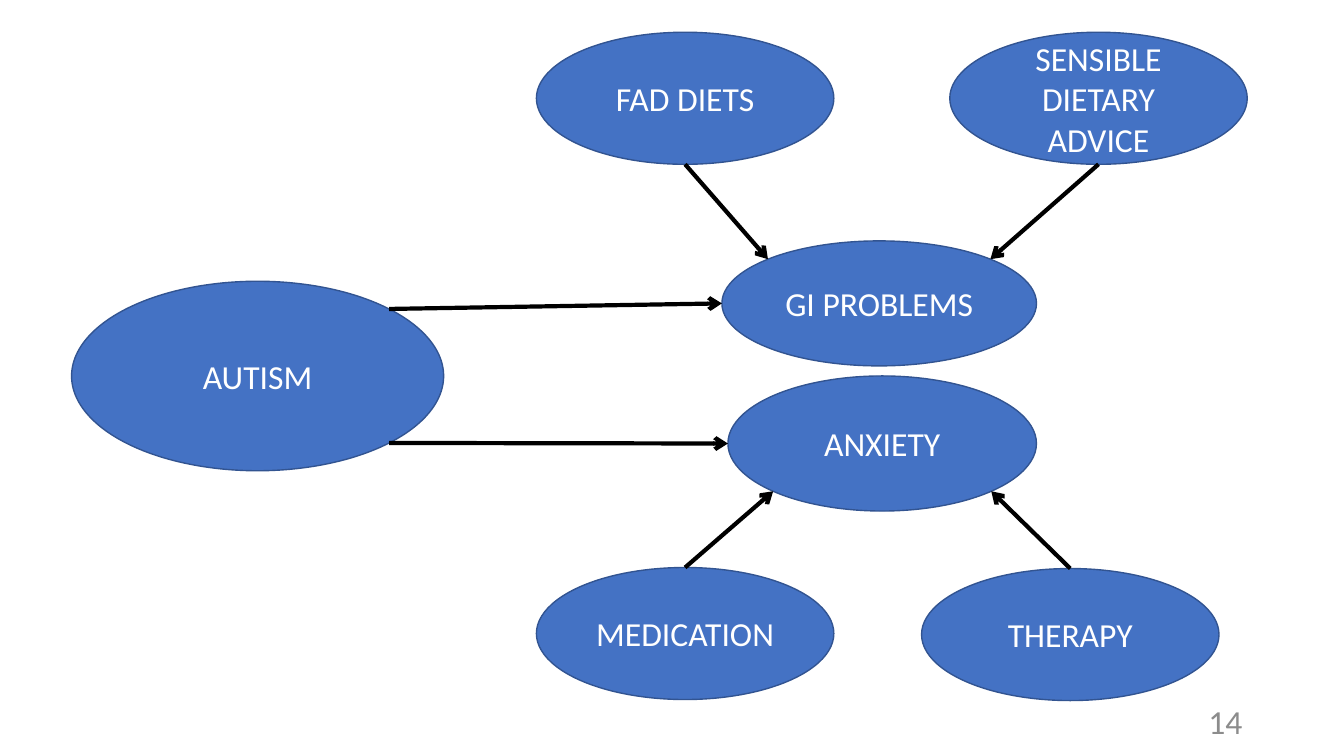
"""Build the slide that maps autism to GI problems, anxiety and their treatments."""
import math

import pptx
import pptx.dml.color
import pptx.enum.shapes
import pptx.enum.text
import pptx.oxml
import pptx.oxml.ns
import pptx.util

Inches = pptx.util.Inches
COLORS = {"fill": "4472C4", "outline": "325491", "text": "FFFFFF", "arrow": "000000", "number": "8C8C8C"}
FONT = {"name": "Calibri", "size": pptx.util.Pt(24)}
FRAME = {"word_wrap": True, "vertical_anchor": pptx.enum.text.MSO_ANCHOR.MIDDLE}
OVALS = {
    "AUTISM": (0.71, 2.79, 3.69, 1.88),
    "ANXIETY": (7.22, 3.73, 3.06, 1.34),
    "GI PROBLEMS": (7.16, 2.39, 3.12, 1.24),
    "FAD DIETS": (5.32, 0.32, 2.95, 1.31),
    "SENSIBLE DIETARY\vADVICE": (9.42, 0.32, 2.95, 1.31),
    "MEDICATION": (5.32, 5.63, 2.95, 1.31),
    "THERAPY": (9.14, 5.64, 2.95, 1.31),
}
ARROWS = [
    ("AUTISM", -45, "GI PROBLEMS", 180),
    ("AUTISM", 45, "ANXIETY", 180),
    ("FAD DIETS", 90, "GI PROBLEMS", 225),
    ("SENSIBLE DIETARY\vADVICE", 90, "GI PROBLEMS", -45),
    ("MEDICATION", -90, "ANXIETY", 135),
    ("THERAPY", -90, "ANXIETY", 45),
]


def write_text(box, text, color, alignment):
    """Put formatted text in a box."""
    for name, value in FRAME.items():
        setattr(box.text_frame, name, value)
    para = box.text_frame.paragraphs[0]
    para.text = text
    para.alignment = alignment
    for span in para.runs:
        for name, value in FONT.items():
            setattr(span.font, name, value)
        span.font.color.rgb = pptx.dml.color.RGBColor.from_string(COLORS[color])


def rim_point(label, degrees):
    """Return the point on an oval's rim, measured clockwise from its right end."""
    left, top, width, height = OVALS[label]
    angle = math.radians(degrees)
    return (Inches(left + width / 2 * (1 + math.cos(angle))),
            Inches(top + height / 2 * (1 + math.sin(angle))))


deck = pptx.Presentation()
deck.slide_width = Inches(13.33)
deck.slide_height = Inches(7.5)
page = deck.slides.add_slide(deck.slide_layouts[6])

number = page.shapes.add_textbox(Inches(9.42), Inches(6.95), Inches(3), Inches(0.4))
write_text(number, "14", "number", pptx.enum.text.PP_ALIGN.RIGHT)

for label, bounds in OVALS.items():
    oval = page.shapes.add_shape(pptx.enum.shapes.MSO_SHAPE.OVAL, *map(Inches, bounds))
    oval.shadow.inherit = False
    oval.fill.solid()
    oval.fill.fore_color.rgb = pptx.dml.color.RGBColor.from_string(COLORS["fill"])
    oval.line.color.rgb = pptx.dml.color.RGBColor.from_string(COLORS["outline"])
    oval.line.width = pptx.util.Pt(1)
    write_text(oval, label, "text", pptx.enum.text.PP_ALIGN.CENTER)

for source, source_angle, target, target_angle in ARROWS:
    arrow = page.shapes.add_connector(
        pptx.enum.shapes.MSO_CONNECTOR.STRAIGHT,
        *rim_point(source, source_angle), *rim_point(target, target_angle))
    arrow.line.color.rgb = pptx.dml.color.RGBColor.from_string(COLORS["arrow"])
    arrow.line.width = pptx.util.Pt(3)
    head = pptx.oxml.parse_xml(f'<a:tailEnd {pptx.oxml.ns.nsdecls("a")} type="arrow"/>')
    arrow.line._get_or_add_ln().append(head)
    effects = pptx.oxml.parse_xml(f'<a:effectLst {pptx.oxml.ns.nsdecls("a")}/>')
    arrow._element.spPr.append(effects)

deck.save("out.pptx")
